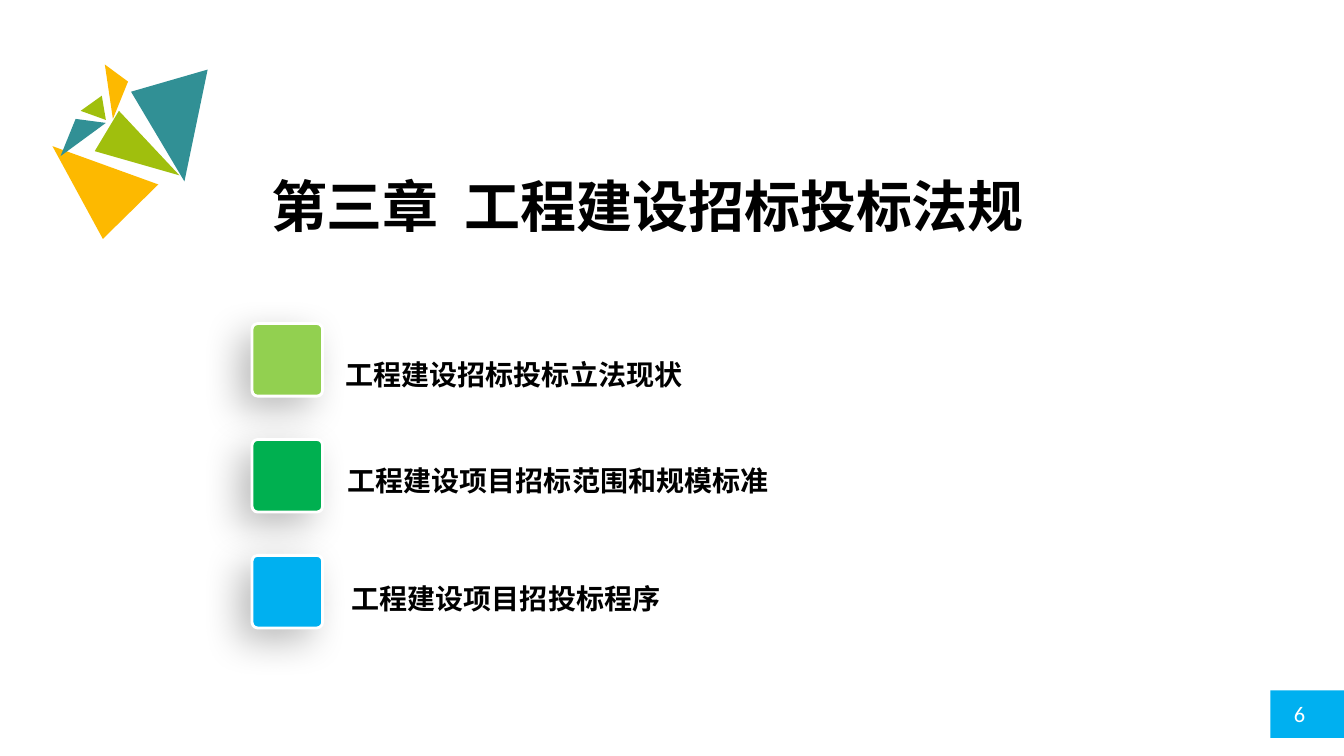
from dataclasses import dataclass

from lxml import etree
from pptx import Presentation
from pptx.dml.color import RGBColor as RGB
from pptx.enum.shapes import MSO_SHAPE as SHAPE
from pptx.enum.text import PP_ALIGN as ALIGN
from pptx.oxml import parse_xml
from pptx.oxml.ns import nsdecls
from pptx.util import Inches, Pt


@dataclass(frozen=True)
class Theme:
    cjk: str = "Noto Sans CJK SC"
    latin: str = "Calibri"
    black: str = "000000"
    white: str = "FFFFFF"
    teal: str = "319095"
    olive: str = "A0BF0D"
    amber: str = "FDB900"
    lime: str = "92D050"
    green: str = "00B050"
    blue: str = "00B0F0"
    title_size: int = 40
    item_size: int = 20
    page_size: int = 16


class SlideBuilder:
    def __init__(self, slide, theme):
        self.shapes = slide.shapes
        self.theme = theme

    def paint(self, sp, color):
        sp.shadow.inherit = False
        sp.fill.solid()
        sp.fill.fore_color.rgb = RGB.from_string(color)
        sp.line.fill.background()

    def rect(self, x, y, w, h, color, kind=SHAPE.RECTANGLE):
        sp = self.shapes.add_shape(kind, Inches(x), Inches(y), Inches(w), Inches(h))
        self.paint(sp, color)
        return sp

    def triangle(self, points, color):
        start, *rest = [(Inches(x), Inches(y)) for x, y in points]
        path = self.shapes.build_freeform(*start)
        path.add_line_segments(rest)
        self.paint(path.convert_to_shape(), color)

    def tile(self, x, y, w, h, color):
        """Rounded square with a white rim and a soft shadow to the lower left."""
        sp = self.rect(x, y, w, h, color, SHAPE.ROUNDED_RECTANGLE)
        sp.adjustments[0] = 0.08
        sp.line.color.rgb = RGB.from_string(self.theme.white)
        sp.line.width = Pt(2)
        sp._element.spPr.remove(sp._element.spPr.find("{*}effectLst"))
        effects = parse_xml(f"<a:effectLst {nsdecls('a')}/>")
        shadow = etree.SubElement(
            effects, effects.tag.replace("effectLst", "outerShdw"),
            blurRad=str(Pt(27)), dist=str(Pt(12)), dir=str(135 * 60000),
            algn="tr", rotWithShape="0")
        color_el = etree.SubElement(
            shadow, effects.tag.replace("effectLst", "srgbClr"), val=self.theme.black)
        etree.SubElement(
            color_el, effects.tag.replace("effectLst", "alpha"), val="26000")
        sp._element.spPr.append(effects)

    def text(self, x, y, w, h, words, size, color, font, bold=False,
             spacing=None, align=ALIGN.LEFT):
        tf = self.shapes.add_textbox(
            Inches(x), Inches(y), Inches(w), Inches(h)).text_frame
        tf.word_wrap = True
        p = tf.paragraphs[0]
        p.text = words
        p.alignment = align
        p.line_spacing = spacing
        p.font.name = font
        p.font.size = Pt(size)
        p.font.bold = bold
        p.font.color.rgb = RGB.from_string(color)


def main():
    prs = Presentation()
    prs.slide_width, prs.slide_height = Inches(13.33), Inches(7.5)
    t = Theme()
    s = SlideBuilder(prs.slides.add_slide(prs.slide_layouts[6]), t)

    s.rect(12.6, 6.85, 0.74, 0.47, t.blue)
    s.text(12.66, 6.9, 0.46, 0.37, "6", t.page_size, t.white, t.latin,
           align=ALIGN.CENTER)

    shards = [
        (t.teal, [(2.06, 0.69), (1.83, 1.8), (1.3, 0.91)]),
        (t.olive, [(1.18, 1.1), (1.78, 1.74), (0.94, 1.5)]),
        (t.amber, [(0.52, 1.45), (1.57, 1.83), (1.02, 2.37)]),
        (t.teal, [(0.75, 1.18), (1.05, 1.22), (0.6, 1.55)]),
        (t.olive, [(1.01, 0.95), (1.05, 1.19), (0.8, 1.1)]),
        (t.amber, [(1.04, 0.64), (1.27, 0.81), (1.12, 1.18)]),
    ]
    for color, points in shards:
        s.triangle(points, color)

    s.text(2.59, 1.65, 9.34, 0.96, "第三章  工程建设招标投标法规",
           t.title_size, t.black, t.cjk, bold=True)

    items = [
        (t.lime, "工程建设招标投标立法现状", 3.33, 3.13, 0.81, 2.1),
        (t.green, "工程建设项目招标范围和规模标准", 3.35, 4.38, 0.6, 1.5),
        (t.blue, "工程建设项目招投标程序", 3.39, 5.35, 0.81, 2.1),
    ]
    for i, (color, words, x, y, h, spacing) in enumerate(items):
        s.tile(2.5, 3.21 + 1.15 * i, 0.7, 0.72, color)
        s.text(x, y, 6.67, h, words, t.item_size, t.black, t.cjk,
               bold=True, spacing=spacing)

    prs.save("out.pptx")


if __name__ == "__main__":
    main()
